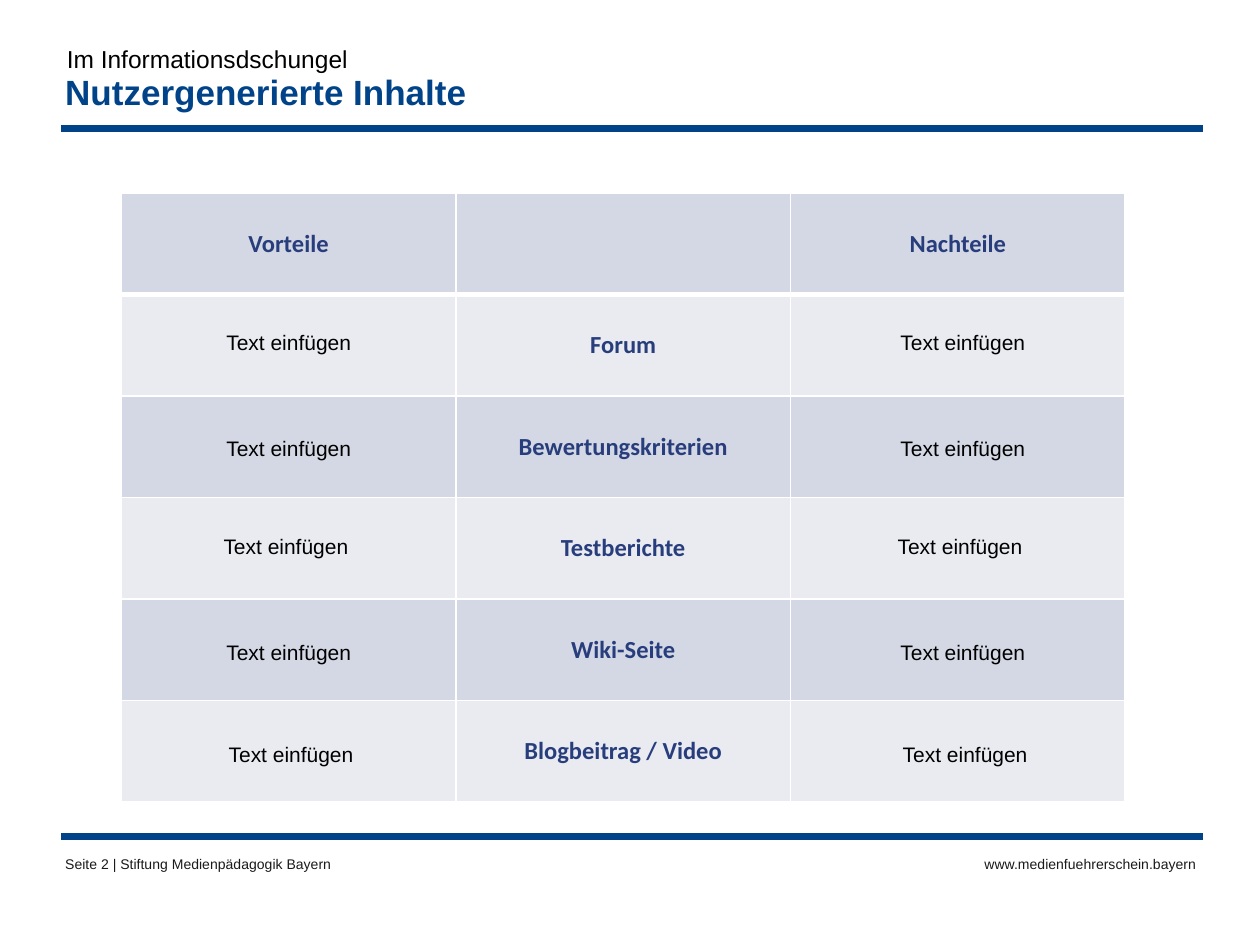
from lxml.etree import SubElement
from pptx import Presentation
from pptx.dml.color import RGBColor
from pptx.enum.shapes import MSO_CONNECTOR
from pptx.enum.text import MSO_ANCHOR, PP_ALIGN
from pptx.oxml.ns import qn
from pptx.util import Pt

BLUE = "004388"
NAVY = "283D7C"
BLACK = "000000"
GREY = "1A1A1A"
WHITE = "FFFFFF"


def color(hex_text):
    return RGBColor.from_string(hex_text)


class SlideBuilder:
    font = "Arial"
    table_font = "Calibri"

    def __init__(self, slide):
        self.slide = slide

    def style(self, paragraph, size, hex_text, bold=False, font=None):
        paragraph.font.name = font or self.font
        paragraph.font.size = Pt(size)
        paragraph.font.bold = bold
        paragraph.font.color.rgb = color(hex_text)

    def rule(self, left, right, top):
        line = self.slide.shapes.add_connector(
            MSO_CONNECTOR.STRAIGHT, Pt(left), Pt(top), Pt(right), Pt(top))
        line.line.color.rgb = color(BLUE)
        line.line.width = Pt(4)
        SubElement(line._element.spPr, qn("a:effectLst"))

    def text(self, text, box, size, hex_text, bold=False, align=PP_ALIGN.LEFT,
             anchor=MSO_ANCHOR.TOP, insets=(7.2, 3.6), spacing=None):
        shape = self.slide.shapes.add_textbox(*map(Pt, box))
        frame = shape.text_frame
        frame.word_wrap = True
        frame.vertical_anchor = anchor
        frame.margin_left = frame.margin_right = Pt(insets[0])
        frame.margin_top = frame.margin_bottom = Pt(insets[1])
        paragraph = frame.paragraphs[0]
        paragraph.text = text
        paragraph.alignment = align
        if spacing:
            paragraph.line_spacing = Pt(spacing)
        self.style(paragraph, size, hex_text, bold)

    def border(self, cell, side, width):
        line = SubElement(cell._tc.get_or_add_tcPr(), qn(f"a:ln{side}"), w=str(Pt(width)))
        fill = SubElement(line, qn("a:solidFill"))
        SubElement(fill, qn("a:srgbClr"), val=WHITE)

    def cell(self, cell, text, opacity, top, bottom):
        # Borders must precede the fill
        for side, width in (("L", 1), ("R", 1), ("T", top), ("B", bottom)):
            self.border(cell, side, width)
        cell.fill.solid()
        cell.fill.fore_color.rgb = color(NAVY)
        fill_color = cell._tc.tcPr.find(qn("a:solidFill")).find(qn("a:srgbClr"))
        SubElement(fill_color, qn("a:alpha"), val=str(opacity * 1000))
        cell.vertical_anchor = MSO_ANCHOR.MIDDLE
        paragraph = cell.text_frame.paragraphs[0]
        paragraph.text = text
        paragraph.alignment = PP_ALIGN.CENTER
        self.style(paragraph, 14, NAVY, True, self.table_font)

    def table(self, rows, left, top, column_width, row_height):
        columns = len(rows[0])
        table = self.slide.shapes.add_table(
            len(rows), columns, Pt(left), Pt(top),
            Pt(column_width * columns), Pt(row_height * len(rows))).table
        table.first_row = table.horz_banding = False
        for column in table.columns:
            column.width = Pt(column_width)
        for index, row in enumerate(rows):
            table.rows[index].height = Pt(row_height)
            for column, text in enumerate(row):
                self.cell(table.cell(index, column), text,
                          opacity=10 if index % 2 else 20,
                          top=3 if index == 1 else 1,
                          bottom=3 if index == 0 else 1)


def main():
    presentation = Presentation()
    presentation.slide_width = Pt(720)
    presentation.slide_height = Pt(540)
    builder = SlideBuilder(presentation.slides.add_slide(presentation.slide_layouts[6]))

    # Rules and footer
    for top in (478.2, 73.4):
        builder.rule(34.8, 687.6, top)
    builder.text("www.medienfuehrerschein.bayern", (522.7, 485.3, 168, 20), 8, GREY,
                 align=PP_ALIGN.RIGHT)
    builder.text("Seite 2 | Stiftung Medienpädagogik Bayern", (30.2, 485.3, 202.3, 20), 8, GREY)

    # Heading
    builder.text("Nutzergenerierte Inhalte", (30.2, 25.2, 662.4, 55.4), 20, BLUE, bold=True,
                 anchor=MSO_ANCHOR.MIDDLE, spacing=23)
    builder.text("Im Informationsdschungel", (30.2, 15.1, 285, 31), 14, BLACK,
                 anchor=MSO_ANCHOR.BOTTOM, insets=(8, 4), spacing=23)

    # Comparison table
    topics = ["Forum", "Bewertungskriterien", "Testberichte", "Wiki-Seite",
              "Blogbeitrag / Video"]
    rows = [["Vorteile", "", "Nachteile"]] + [["", topic, ""] for topic in topics]
    builder.table(rows, 69.3, 110.2, 191.25, 58)

    # Entry fields in the outer columns
    fields = [(69.3, 167), (69.3, 227.5), (67.7, 283.7), (69.3, 344.2), (70.6, 402.5)]
    for offset in (0, 385.2):
        for left, top in fields:
            builder.text("Text einfügen", (left + offset, top, 191.5, 57), 12, BLACK,
                         align=PP_ALIGN.CENTER, anchor=MSO_ANCHOR.MIDDLE, insets=(3, 3))

    presentation.save("out.pptx")


if __name__ == "__main__":
    main()
